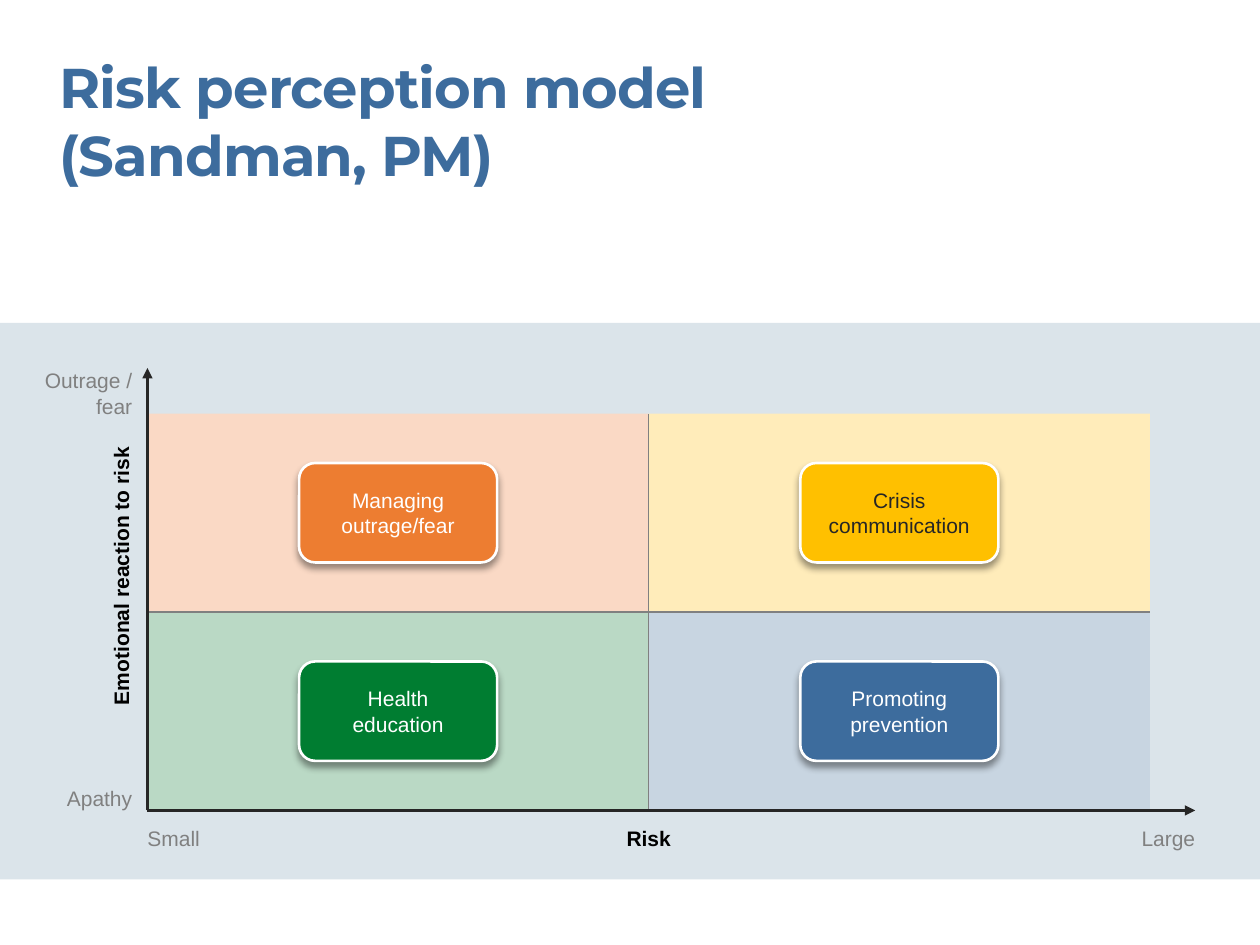
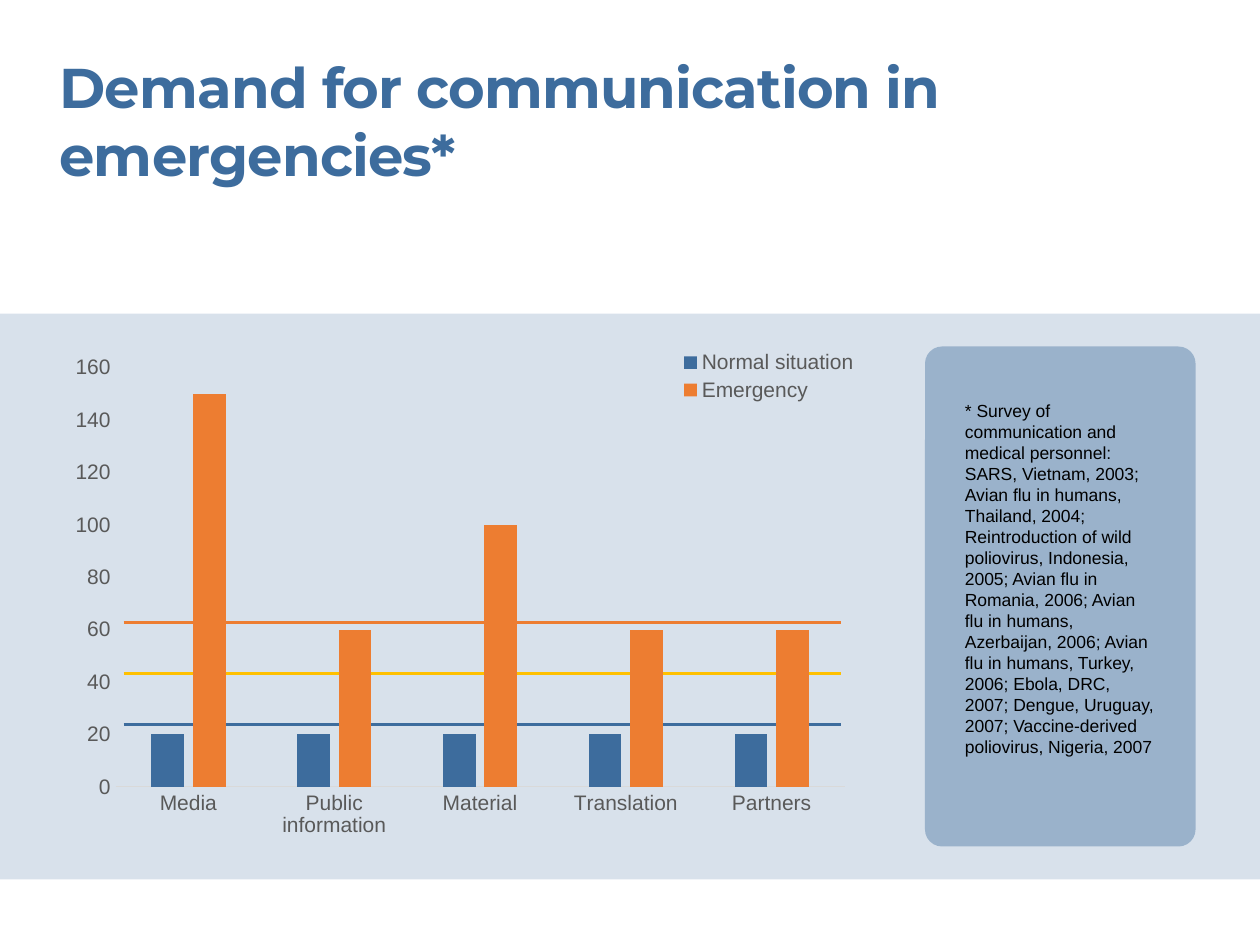
from lxml import etree
from pptx import Presentation
from pptx import util as u
from pptx.chart.data import CategoryChartData
from pptx.dml.color import RGBColor
from pptx.enum import chart as charts, shapes, text
from pptx.oxml.ns import qn

Pt = u.Pt
COLORS = {
    "blue": "3D6C9D", "orange": "ED7D31", "yellow": "FFC000", "green": "007D31",
    "pale_blue": "C8D5E1", "pale_orange": "FAD9C5", "pale_yellow": "FFECBA",
    "pale_green": "BAD9C5", "band": "DBE4EA", "white": "FFFFFF", "black": "000000",
    "dark": "262626", "gray": "808080", "chart_text": "595959", "axis": "D9D9D9",
}
LEFT, CENTER, RIGHT = text.PP_ALIGN.LEFT, text.PP_ALIGN.CENTER, text.PP_ALIGN.RIGHT
RECTANGLE = shapes.MSO_SHAPE.RECTANGLE
ROUNDED = shapes.MSO_SHAPE.ROUNDED_RECTANGLE
SLIDE_WIDTH, SLIDE_HEIGHT = 720, 540
MARGIN = 34
BAND_BOTTOM = 502.5


def rgb(name):
    return RGBColor.from_string(COLORS[name])


def add_xml(parent, tag, **attributes):
    return etree.SubElement(parent, qn(tag), attributes)


class Deck:
    """Holds the shared style and the slide being built."""

    def __init__(self):
        self.presentation = Presentation()
        self.presentation.slide_width = Pt(SLIDE_WIDTH)
        self.presentation.slide_height = Pt(SLIDE_HEIGHT)
        self.slide = None

    def font(self, font, size, color, bold=False, name="Arial"):
        font.name, font.size, font.bold = name, Pt(size), bold
        font.color.rgb = rgb(color)

    def set_text(self, frame, words, size, color, bold=False, align=LEFT, name="Arial"):
        frame.text = words
        frame.word_wrap = True
        for paragraph in frame.paragraphs:
            paragraph.alignment = align
            for run in paragraph.runs:
                self.font(run.font, size, color, bold, name)

    def no_margins(self, frame):
        frame.margin_left = frame.margin_right = 0
        frame.margin_top = frame.margin_bottom = 0

    def new_slide(self, title, title_width):
        self.slide = self.presentation.slides.add_slide(self.presentation.slide_layouts[5])
        shape = self.slide.shapes.title
        shape.left, shape.top = Pt(MARGIN), Pt(30.2)
        shape.width, shape.height = Pt(title_width), Pt(78)
        frame = shape.text_frame
        self.set_text(frame, title, 32, "blue", bold=True, name="Montserrat")
        self.no_margins(frame)
        frame.vertical_anchor = text.MSO_ANCHOR.TOP
        frame.auto_size = text.MSO_AUTO_SIZE.NONE
        for run in frame.paragraphs[0].runs:
            run.font._element.set("spc", "-50")

    def box(self, kind, left, top, width, height, fill, opacity=100, radius=None):
        shape = self.slide.shapes.add_shape(kind, Pt(left), Pt(top), Pt(width), Pt(height))
        shape.shadow.inherit = False
        shape.fill.solid()
        shape.fill.fore_color.rgb = rgb(fill)
        shape.line.fill.background()
        if opacity < 100:
            color = shape._element.spPr.find(qn("a:solidFill")).find(qn("a:srgbClr"))
            add_xml(color, "a:alpha", val=str(opacity * 1000))
        if radius is not None:
            shape.adjustments[0] = radius
        return shape

    def band(self, top, fill, opacity=100):
        self.box(RECTANGLE, 0, top, SLIDE_WIDTH, BAND_BOTTOM - top, fill, opacity)

    def card(self, left, top, width, height, words, fill, color):
        shape = self.box(ROUNDED, left, top, width, height, fill, radius=0.161)
        shape.line.color.rgb = rgb("white")
        shape.line.width = Pt(1.5)
        effects = shape._element.spPr.find(qn("a:effectLst"))
        shadow = add_xml(effects, "a:outerShdw", blurRad=str(Pt(4)), dist=str(Pt(3)),
                         dir="5400000", algn="t", rotWithShape="0")
        shade = add_xml(shadow, "a:srgbClr", val=COLORS["black"])
        add_xml(shade, "a:alpha", val="40000")
        shape.text_frame.vertical_anchor = text.MSO_ANCHOR.MIDDLE
        self.set_text(shape.text_frame, words, 12, color, align=CENTER)

    def label(self, left, top, width, height, words, size=12, color="gray",
              bold=False, align=LEFT, rotation=0):
        shape = self.slide.shapes.add_textbox(Pt(left), Pt(top), Pt(width), Pt(height))
        self.no_margins(shape.text_frame)
        self.set_text(shape.text_frame, words, size, color, bold, align)
        shape.text_frame.auto_size = text.MSO_AUTO_SIZE.SHAPE_TO_FIT_TEXT
        shape.rotation = rotation

    def line(self, x1, y1, x2, y2, color, width=1.5, arrow=False):
        connector = self.slide.shapes.add_connector(
            shapes.MSO_CONNECTOR.STRAIGHT, Pt(x1), Pt(y1), Pt(x2), Pt(y2))
        connector.line.color.rgb = rgb(color)
        connector.line.width = Pt(width)
        properties = connector._element.spPr
        if arrow:
            add_xml(properties.find(qn("a:ln")), "a:tailEnd", type="triangle")
        add_xml(properties, "a:effectLst")

    def column_chart(self, left, top, width, height, categories, series, top_value, step):
        data = CategoryChartData()
        data.categories = categories
        for name, values, _ in series:
            data.add_series(name, values)
        chart = self.slide.shapes.add_chart(
            charts.XL_CHART_TYPE.COLUMN_CLUSTERED,
            Pt(left), Pt(top), Pt(width), Pt(height), data).chart
        self.font(chart.font, 10, "black")
        chart.has_title = False
        # Columns
        plot = chart.plots[0]
        plot.vary_by_categories = False
        plot.gap_width, plot.overlap = 219, -27
        for column, (_, _, color) in zip(plot.series, series):
            column.format.fill.solid()
            column.format.fill.fore_color.rgb = rgb(color)
            column.invert_if_negative = False
        # Axes
        for axis in (chart.category_axis, chart.value_axis):
            axis.has_major_gridlines = False
            axis.major_tick_mark = axis.minor_tick_mark = charts.XL_TICK_MARK.NONE
            self.font(axis.tick_labels.font, 12, "chart_text")
        chart.category_axis.format.line.color.rgb = rgb("axis")
        chart.category_axis.format.line.width = Pt(0.75)
        chart.value_axis.format.line.fill.background()
        chart.value_axis.minimum_scale = 0
        chart.value_axis.maximum_scale = top_value
        chart.value_axis.major_unit = step
        # Legend
        chart.has_legend = True
        chart.legend.position = charts.XL_LEGEND_POSITION.CORNER
        chart.legend.include_in_layout = True
        self.font(chart.legend.font, 12, "chart_text")


def risk_model(deck):
    deck.new_slide("Risk perception model (Sandman, PM)", 513.4)
    deck.band(184.5, "band")

    # Quadrants, then the cards centred in them
    left, top, cell_width, cell_height = 84.3, 236.3, 286.4, 113.4
    card_width, card_height = 113.2, 56.8
    quadrants = [
        ("Managing outrage/fear", "orange", "pale_orange", "white"),
        ("Crisis communication", "yellow", "pale_yellow", "dark"),
        ("Health\neducation", "green", "pale_green", "white"),
        ("Promoting prevention", "blue", "pale_blue", "white"),
    ]
    corners = [(left + column * cell_width, top + row * cell_height)
               for row in range(2) for column in range(2)]
    for (x, y), (_, _, pale, _) in zip(corners, quadrants):
        deck.box(RECTANGLE, x, y, cell_width, cell_height, pale)
    for (x, y), (words, fill, _, color) in zip(corners, quadrants):
        deck.card(x + (cell_width - card_width) / 2, y + (cell_height - card_height) / 2,
                  card_width, card_height, words, fill, color)

    # Dividers
    middle_x, middle_y = left + cell_width, top + cell_height
    right, bottom = middle_x + cell_width, middle_y + cell_height
    deck.line(middle_x, bottom, middle_x, top, "gray", 0.75)
    deck.line(left, middle_y, right, middle_y, "gray", 0.75)

    # Axis labels
    label_width, label_height = 64, 14.4
    axis_right, axis_top = 683, 210.3
    label_top = 471.8
    deck.label(left, label_top, label_width, label_height, "Small")
    deck.label(axis_right - label_width, label_top, label_width, label_height,
               "Large", align=RIGHT)
    deck.label(middle_x - label_width / 2, label_top, label_width, label_height,
               "Risk", color="black", bold=True, align=CENTER)
    deck.label(-50.2, 322, 238.4, label_height, "Emotional reaction to risk",
               color="black", bold=True, align=CENTER, rotation=270)
    for y, height, words in ((axis_top, 28.8, "Outrage / fear"),
                             (448.8, label_height, "Apathy")):
        deck.label(11.6, y, label_width, height, words, align=RIGHT)

    # Axes
    deck.line(left, bottom, left, axis_top, "dark", arrow=True)
    deck.line(left, bottom, axis_right, bottom, "dark", arrow=True)


def communication_demand(deck):
    deck.new_slide("Demand for communication in emergencies*", 603.4)
    deck.band(179.2, "blue", opacity=20)

    # Level lines behind the columns
    for index, color in enumerate(("orange", "yellow", "blue")):
        y = 355.6 + index * 29.2
        deck.line(70.7, y, 480.7, y, color)

    # Chart
    panel_top, panel_height = 198, 285.7
    deck.column_chart(
        MARGIN, panel_top, 457.8, panel_height,
        ["Media", "Public information", "Material", "Translation", "Partners"],
        [("Normal situation", [20, 20, 20, 20, 20], "blue"),
         ("Emergency", [150, 60, 100, 60, 60], "orange")],
        top_value=160, step=20)

    # Survey note
    deck.box(ROUNDED, 528.6, panel_top, 154.6, panel_height, "blue", opacity=40, radius=0.063)
    deck.label(
        551.4, 228.5, 110.2, 206,
        "* Survey of communication and medical personnel: SARS, Vietnam, 2003; "
        "Avian flu in humans, Thailand, 2004; Reintroduction of wild poliovirus, "
        "Indonesia, 2005; Avian flu in Romania, 2006; Avian flu in humans, "
        "Azerbaijan, 2006; Avian flu in humans, Turkey, 2006; Ebola, DRC, 2007; "
        "Dengue, Uruguay, 2007; Vaccine-derived poliovirus, Nigeria, 2007",
        size=10, color="black")


def main():
    deck = Deck()
    risk_model(deck)
    communication_demand(deck)
    deck.presentation.save("out.pptx")


if __name__ == "__main__":
    main()
